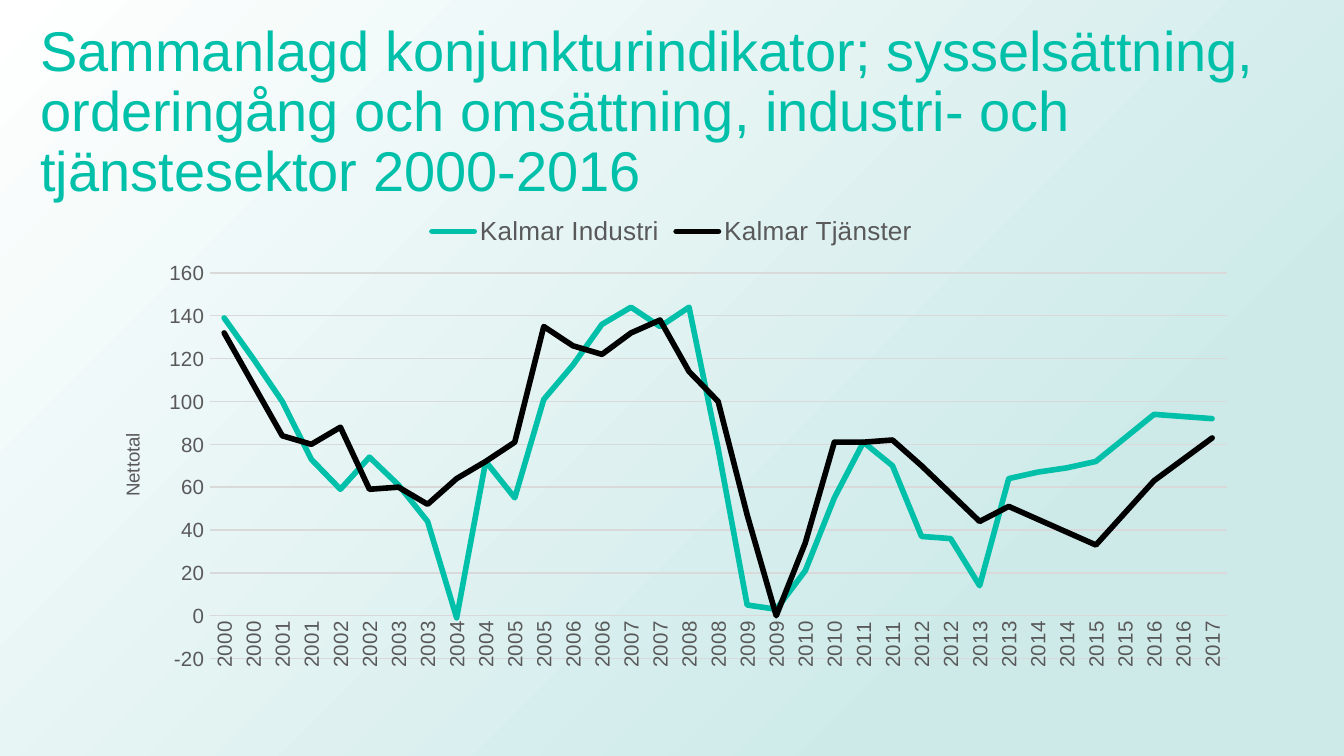
from dataclasses import dataclass

from lxml import etree
from pptx import Presentation
from pptx import util as u
from pptx.chart.data import CategoryChartData
from pptx.dml.color import RGBColor
from pptx.enum import chart as charts, shapes, text
from pptx.oxml import parse_xml
from pptx.oxml.ns import nsdecls, qn


@dataclass(frozen=True)
class Theme:
    font: str = "Arial"
    accent: str = "00C0A9"
    contrast: str = "000000"
    muted: str = "595959"
    grid: str = "D9D9D9"
    tint: str = "CDEAE9"
    paper: str = "FFFFFF"
    title_size: float = 30
    legend_size: float = 14
    axis_size: float = 11
    caption_size: float = 10


TITLE = ("Sammanlagd konjunkturindikator; sysselsättning, orderingång och "
         "omsättning, industri- och tjänstesektor 2000-2016")
# Two readings a year, with a single one for the last year
YEARS = [str(2000 + half // 2) for half in range(35)]
INDUSTRY = [139, 120, 100, 73, 59, 74, 61, 44, -1, 72, 55, 101, 117, 136, 144,
            135, 144, 78, 5, 3, 21, 55, 81, 70, 37, 36, 14, 64, 67, 69, 72, 83,
            94, 93, 92]
SERVICES = [132, 108, 84, 80, 88, 59, 60, 52, 64, 72, 81, 135, 126, 122, 132,
            138, 114, 100, 47, 0, 34, 81, 81, 82, 70, 57, 44, 51, 45, 39, 33,
            48, 63, 73, 83]


def place_in_chart(element, successors, **shares):
    """Give a chart part a manual layout, in shares of the chart's size."""
    for old in element.findall(qn("c:layout")):
        element.remove(old)
    layout = parse_xml(f"<c:layout {nsdecls('c')}><c:manualLayout/></c:layout>")
    manual = layout[0]
    if "w" in shares:
        etree.SubElement(manual, qn("c:layoutTarget")).set("val", "inner")
    for mode in ("xMode", "yMode"):
        etree.SubElement(manual, qn(f"c:{mode}")).set("val", "edge")
    for name, share in shares.items():
        etree.SubElement(manual, qn(f"c:{name}")).set("val", str(share))
    following = next(child for child in element
                     if child.tag in [qn(f"c:{tag}") for tag in successors])
    following.addprevious(layout)


def turn_upwards(body):
    body.set("rot", "-5400000")
    body.set("vert", "horz")


class SlideBuilder:
    def __init__(self, presentation, theme):
        self.theme = theme
        self.width = presentation.slide_width
        self.height = presentation.slide_height
        self.slide = presentation.slides.add_slide(presentation.slide_layouts[5])

    def box(self, left, top, width, height):
        """Turn shares of the slide's size into lengths."""
        return (int(left * self.width), int(top * self.height),
                int(width * self.width), int(height * self.height))

    def style(self, font, size, color):
        font.name = self.theme.font
        font.size = u.Pt(size)
        font.bold = False
        font.color.rgb = RGBColor.from_string(color)

    def stroke(self, line, color, width):
        line.color.rgb = RGBColor.from_string(color)
        line.width = u.Pt(width)

    def backdrop(self):
        """Fill the slide with a glow from its lower right corner."""
        shape = self.slide.shapes.add_shape(
            shapes.MSO_SHAPE.RECTANGLE, *self.box(0, 0, 1, 1))
        shape.shadow.inherit = False
        shape.line.fill.background()
        gradient = parse_xml(
            f'<a:gradFill {nsdecls("a")} rotWithShape="1"><a:gsLst>'
            f'<a:gs pos="23000"><a:srgbClr val="{self.theme.tint}"/></a:gs>'
            f'<a:gs pos="100000"><a:srgbClr val="{self.theme.paper}"/></a:gs>'
            '</a:gsLst><a:path path="circle">'
            '<a:fillToRect l="100000" t="100000"/></a:path></a:gradFill>')
        shape.element.spPr.find(qn("a:prstGeom")).addnext(gradient)
        self.slide.shapes.element.insert(2, shape.element)

    def title(self, wording, box):
        shape = self.slide.shapes.title
        shape.left, shape.top, shape.width, shape.height = self.box(*box)
        frame = shape.text_frame
        frame.word_wrap = True
        frame.auto_size = text.MSO_AUTO_SIZE.NONE
        frame.vertical_anchor = text.MSO_ANCHOR.MIDDLE
        paragraph = frame.paragraphs[0]
        paragraph.alignment = text.PP_ALIGN.LEFT
        paragraph.line_spacing = 0.9
        run = paragraph.add_run()
        run.text = wording
        self.style(run.font, self.theme.title_size, self.theme.accent)

    def line_chart(self, categories, series, caption, box):
        """Draw lines; series maps a name to its values and colour."""
        data = CategoryChartData(number_format="0")
        data.categories = categories
        for name, (values, _) in series.items():
            data.add_series(name, values)
        chart = self.slide.shapes.add_chart(
            charts.XL_CHART_TYPE.LINE, *self.box(*box), data).chart
        chart.has_title = False
        self.style(chart.font, self.theme.caption_size, self.theme.muted)
        chart.has_legend = True
        chart.legend.position = charts.XL_LEGEND_POSITION.TOP
        chart.legend.include_in_layout = False
        self.style(chart.legend.font, self.theme.legend_size, self.theme.muted)
        for line, (_, color) in zip(chart.plots[0].series, series.values()):
            line.smooth = False
            line.marker.style = charts.XL_MARKER_STYLE.NONE
            self.stroke(line.format.line, color, 3)
            line.format.line._get_or_add_ln().set("cap", "rnd")
        self.axes(chart, caption)
        place_in_chart(chart._chartSpace.chart.plotArea, ["lineChart"],
                       x=0.1, y=0.15, w=0.88, h=0.81)

    def axes(self, chart, caption):
        years, values = chart.category_axis, chart.value_axis
        for axis in (years, values):
            axis.major_tick_mark = charts.XL_TICK_MARK.NONE
            axis.minor_tick_mark = charts.XL_TICK_MARK.NONE
            self.style(axis.tick_labels.font, self.theme.axis_size, self.theme.muted)
        years.has_major_gridlines = False
        self.stroke(years.format.line, self.theme.grid, 0.75)
        turn_upwards(years._element.find(qn("c:txPr")).find(qn("a:bodyPr")))

        values.minimum_scale, values.maximum_scale, values.major_unit = -20, 160, 20
        values.tick_labels.number_format = "0"
        values.tick_labels.number_format_is_linked = False
        values.format.line.fill.background()
        self.stroke(values.major_gridlines.format.line, self.theme.grid, 0.75)
        frame = values.axis_title.text_frame
        run = frame.paragraphs[0].add_run()
        run.text = caption
        self.style(run.font, self.theme.caption_size, self.theme.muted)
        turn_upwards(frame._txBody.find(qn("a:bodyPr")))
        place_in_chart(values.axis_title._element, ["overlay", "spPr", "txPr"],
                       x=0.02, y=0.48)


def main():
    presentation = Presentation()
    presentation.slide_width = u.Inches(10)
    presentation.slide_height = presentation.slide_width * 9 // 16
    theme = Theme()
    builder = SlideBuilder(presentation, theme)
    builder.backdrop()
    builder.title(TITLE, (0.02, 0.05, 1, 0.2))
    builder.line_chart(
        YEARS,
        {"Kalmar Industri": (INDUSTRY, theme.accent),
         "Kalmar Tjänster": (SERVICES, theme.contrast)},
        "Nettotal", (0.07, 4 / 15, 0.86, 0.63))
    presentation.save("out.pptx")


if __name__ == "__main__":
    main()
